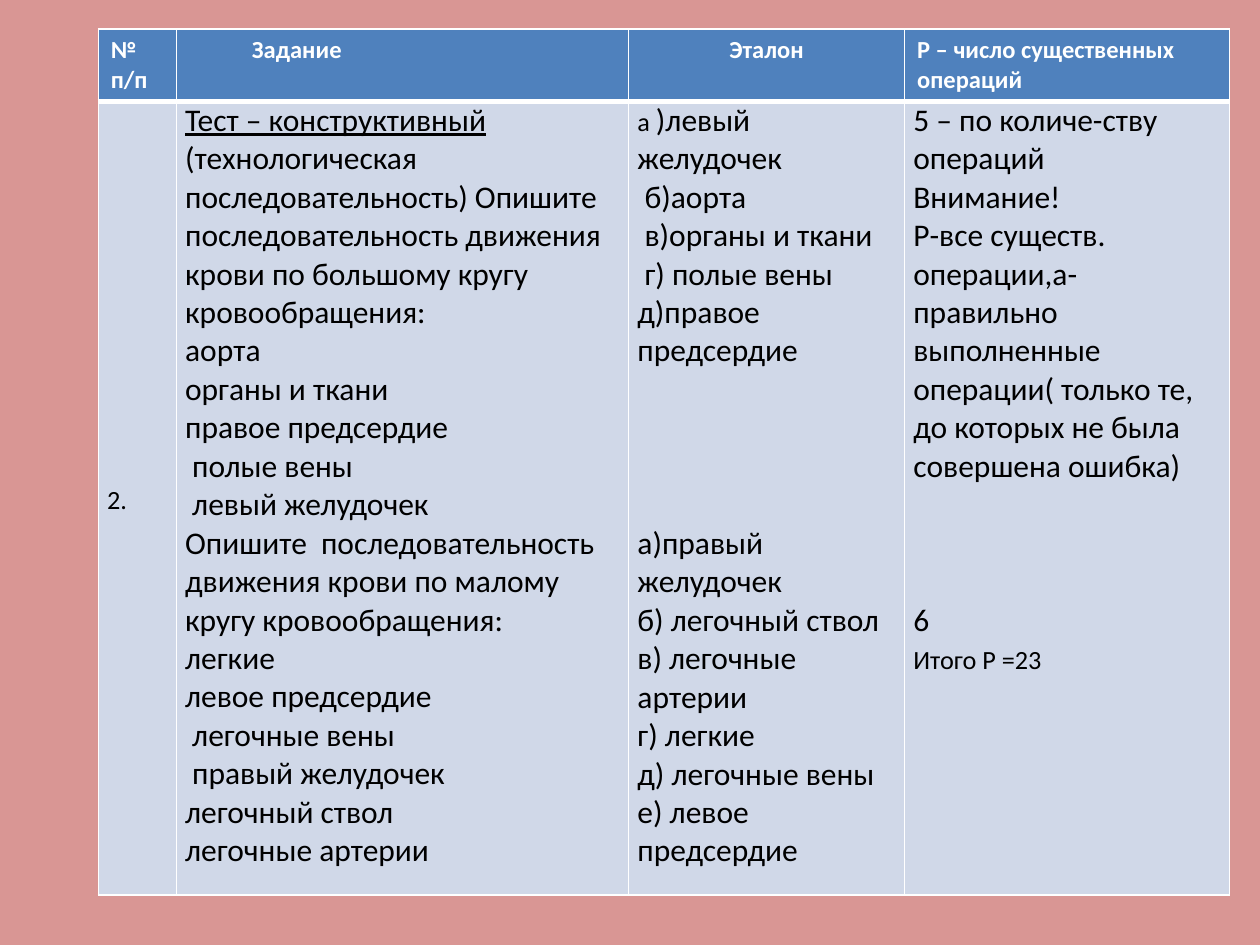
import lxml.etree
import pptx
import pptx.dml.color
import pptx.enum.text
import pptx.oxml.ns
import pptx.util

Inches = pptx.util.Inches
Pt = pptx.util.Pt
RGBColor = pptx.dml.color.RGBColor
Anchor = pptx.enum.text.MSO_ANCHOR

BACKGROUND = RGBColor(0xD9, 0x96, 0x94)
HEADER_FILL = RGBColor(0x4F, 0x81, 0xBD)
BODY_FILL = RGBColor(0xD0, 0xD8, 0xE8)
WHITE = RGBColor(0xFF, 0xFF, 0xFF)
BLACK = RGBColor(0, 0, 0)

BODY_SIZE = 18
SMALL_SIZE = 15
LINE_HEIGHT = 22
COLUMN_WIDTHS = [0.62, 3.59, 2.19, 2.58]
ROW_HEIGHTS = [0.57, 6.3]

HEADERS = [["№", "п/п"], ["Задание"], ["Эталон"], ["Р – число существенных операций"]]
HEADER_INDENTS = [0, 0.5, 0.7, 0]
TASKS = [
    "Тест – конструктивный",
    "(технологическая последовательность) Опишите  последовательность "
    "движения крови по большому кругу кровообращения:",
    "аорта",
    "органы и ткани",
    "правое предсердие",
    " полые вены",
    " левый желудочек",
    "Опишите  последовательность движения крови по малому кругу кровообращения:",
    "легкие",
    "левое предсердие",
    " легочные вены",
    " правый желудочек",
    "легочный ствол",
    "легочные артерии",
]
ANSWERS = [
    "а ",
    " б)аорта",
    " в)органы и ткани",
    " г) полые вены",
    "д)правое предсердие",
    "а)правый желудочек",
    "б) легочный ствол",
    "в) легочные артерии",
    "г) легкие",
    "д) легочные вены",
    "е) левое предсердие",
]
SCORES = [
    "5 – по количе-ству операций",
    "Внимание!",
    "Р-все существ. операции,а- правильно выполненные операции"
    "( только те, до которых не была совершена ошибка)",
    "6",
    "Итого Р =23",
]


def set_borders(cell, widths):
    """Draw white left, right, top and bottom borders of the given point widths."""
    properties = cell._tc.get_or_add_tcPr()
    for index, (side, width) in enumerate(zip("LRTB", widths)):
        line = lxml.etree.Element(pptx.oxml.ns.qn(f"a:ln{side}"), w=str(Pt(width)))
        fill = lxml.etree.SubElement(line, pptx.oxml.ns.qn("a:solidFill"))
        lxml.etree.SubElement(fill, pptx.oxml.ns.qn("a:srgbClr"), val=str(WHITE))
        properties.insert(index, line)


def format_run(run, size, color, bold=False):
    """Set the font of one run."""
    run.font.name = "Calibri"
    run.font.size = Pt(size)
    run.font.bold = bold
    run.font.color.rgb = color


def fill_cell(cell, lines, fill, margins, size, color, bold=False):
    """Fill a cell with one paragraph per line and return the paragraphs."""
    cell.fill.solid()
    cell.fill.fore_color.rgb = fill
    cell.margin_left = cell.margin_right = Inches(margins[0])
    cell.margin_top = cell.margin_bottom = Inches(margins[1])
    cell.text_frame.text = "\n".join(lines)
    for paragraph in cell.text_frame.paragraphs:
        for run in paragraph.runs:
            format_run(run, size, color, bold)
    return cell.text_frame.paragraphs


def fill_header(row):
    """Fill the header row."""
    for cell, lines, indent in zip(row.cells, HEADERS, HEADER_INDENTS):
        paragraphs = fill_cell(cell, lines, HEADER_FILL, (0.1, 0.05), 14, WHITE, True)
        set_borders(cell, (1, 1, 1, 3))
        if indent:
            properties = paragraphs[0]._p.get_or_add_pPr()
            properties.set("marL", str(Inches(indent)))
            properties.set("indent", "0")


def fill_body(row):
    """Fill the row with the number, the tasks, the answers and the scores."""
    columns = [["2."], TASKS, ANSWERS, SCORES]
    sizes = [SMALL_SIZE, BODY_SIZE, BODY_SIZE, BODY_SIZE]
    paragraphs = []
    for cell, lines, size in zip(row.cells, columns, sizes):
        paragraphs.append(fill_cell(cell, lines, BODY_FILL, (0.07, 0), size, BLACK))
        set_borders(cell, (1, 1, 3, 1))
    number, tasks, answers, scores = paragraphs

    row.cells[0].vertical_anchor = Anchor.MIDDLE
    number[0].line_spacing = 1.15
    tasks[0].runs[0].font.underline = True

    answers[0].runs[0].font.size = Pt(SMALL_SIZE)
    first_answer = answers[0].add_run()
    first_answer.text = ")левый желудочек"
    format_run(first_answer, BODY_SIZE, BLACK)
    answers[5].space_before = Pt(4 * LINE_HEIGHT)

    scores[3].space_before = Pt(3 * LINE_HEIGHT)
    scores[4].alignment = pptx.enum.text.PP_ALIGN.JUSTIFY
    scores[4].line_spacing = 1.15
    scores[4].runs[0].font.size = Pt(SMALL_SIZE)


def add_task_table(slide, left, top, width, height):
    """Add the table of tasks and reference answers in the given box."""
    shape = slide.shapes.add_table(2, 4, left, top, width, height)
    table = shape.table
    for column, column_width in zip(table.columns, COLUMN_WIDTHS):
        column.width = Inches(column_width)
    for row, row_height in zip(table.rows, ROW_HEIGHTS):
        row.height = Inches(row_height)
    fill_header(table.rows[0])
    fill_body(table.rows[1])


def main():
    """Build and save the presentation."""
    presentation = pptx.Presentation()
    presentation.slide_width = Inches(10)
    presentation.slide_height = Inches(7.5)
    slide = presentation.slides.add_slide(presentation.slide_layouts[6])
    slide.background.fill.solid()
    slide.background.fill.fore_color.rgb = BACKGROUND
    add_task_table(slide, Inches(0.78), Inches(0.23), Inches(8.98), Inches(6.87))
    presentation.save("out.pptx")


if __name__ == "__main__":
    main()
